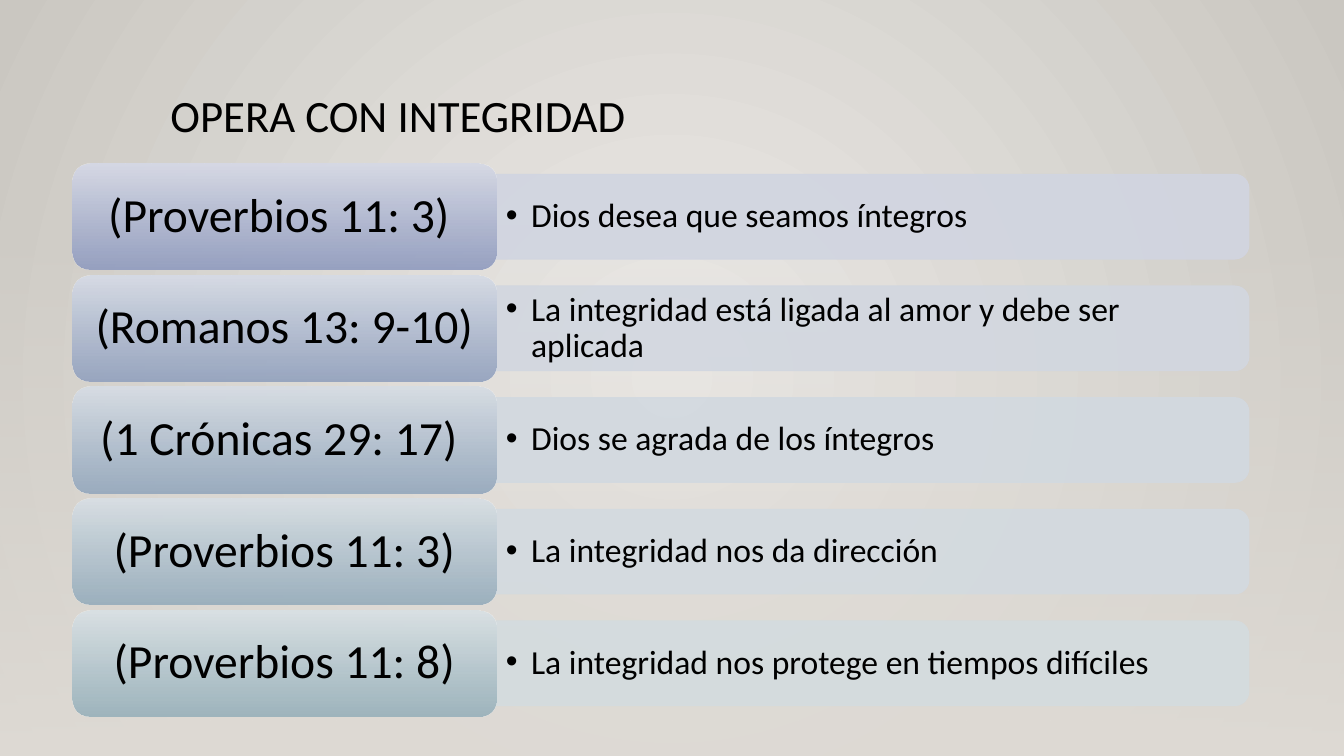
from lxml import etree
from pptx import Presentation
from pptx import util as u
from pptx.dml import color
from pptx.enum import shapes, text
from pptx.oxml import ns

TITLE = "OPERA CON INTEGRIDAD"
ROWS = [
    ("(Proverbios 11: 3) ", "Dios desea que seamos íntegros"),
    ("(Romanos 13: 9-10)", "La integridad está ligada al amor y debe ser aplicada"),
    ("(1 Crónicas 29: 17) ", "Dios se agrada de los íntegros"),
    ("(Proverbios 11: 3)", "La integridad nos da dirección"),
    ("(Proverbios 11: 8)", "La integridad nos protege en tiempos difíciles"),
]
HEX = {
    "ink": "000000", "glow": "ECEAE7", "edge": "CAC7C1", "floor": "DFDBD5",
    "bar": ["D1D5E1", "D2D7E0", "D2D9E0", "D3DAE0", "D4DCDF"],
    "top": ["D6D9E5", "D6DBE5", "D7DDE4", "D8DFE4", "D9E1E4"],
    "base": ["929DC0", "94A3BF", "96A9BE", "98AEBD", "9AB2BC"],
}
WIDE, HIGH = 960, 540
LEFT, TOP, STEP = 51.8, 116.8, 79.75
TAB_W, TAB_H = 302.5, 76
BAR_W, BAR_H, NOTE_H = 537.8, 60.5, 54.7
FRAME = dict(word_wrap=True, auto_size=text.MSO_AUTO_SIZE.NONE)
MID = dict(FRAME, vertical_anchor=text.MSO_ANCHOR.MIDDLE)
PAD = dict(margin_left=u.Pt(10.2), margin_right=u.Pt(10.2),
           margin_top=u.Pt(5.1), margin_bottom=u.Pt(5.1))


def apply(obj, style):
    for key, val in style.items():
        setattr(obj, key, val)


def rgb(code):
    return color.RGBColor.from_string(code)


def fade(node, part):
    etree.SubElement(node, ns.qn("a:alpha"), val=str(part * 1000))


def blend(fill, stops):
    fill.gradient()
    fill.gradient_angle = 270
    for stop, (code, part) in zip(fill.gradient_stops, stops):
        stop.color.rgb = rgb(code)
    for node, (code, part) in zip(fill._fill._gradFill.iter(ns.qn("a:srgbClr")), stops):
        if part < 100:
            fade(node, part)


def shape(kind, x, y, w, h):
    item = slide.shapes.add_shape(kind, *map(u.Pt, (x, y, w, h)))
    item.shadow.inherit = False
    return item


def write(frame, words, size, align, style):
    apply(frame, style)
    para = frame.paragraphs[0]
    apply(para, dict(alignment=align, line_spacing=0.9))
    run = para.add_run()
    run.text = words
    apply(run.font, dict(name="Calibri", size=u.Pt(size)))
    run.font.color.rgb = rgb(HEX["ink"])
    return para


def bullet(para):
    para.level = 1
    props = para._p.get_or_add_pPr()
    props.set("marL", str(u.Pt(18)))
    props.set("indent", str(u.Pt(-18)))
    etree.SubElement(props, ns.qn("a:buFont"), typeface="Arial")
    etree.SubElement(props, ns.qn("a:buChar"), char="•")


def backdrop():
    fill = slide.background.fill
    blend(fill, [(HEX["glow"], 100), (HEX["edge"], 100)])
    line = fill._fill._gradFill.find(ns.qn("a:lin"))
    ring = etree.Element(ns.qn("a:path"), {"path": "circle"})
    etree.SubElement(ring, ns.qn("a:fillToRect"), dict.fromkeys("ltrb", "50000"))
    line.getparent().replace(line, ring)
    floor = shape(shapes.MSO_SHAPE.RECTANGLE, 0, 159, WIDE, HIGH - 159)
    floor.line.fill.background()
    blend(floor.fill, [(HEX["floor"], 0), (HEX["floor"], 100)])


def row(num, label, words):
    y = TOP + num * STEP
    mid = y + TAB_H / 2
    x = LEFT + TAB_W
    bar = shape(shapes.MSO_SHAPE.ROUND_2_SAME_RECTANGLE,
                x + (BAR_W - BAR_H) / 2, mid - BAR_W / 2, BAR_H, BAR_W)
    bar.rotation = 90
    for fill in (bar.fill, bar.line.fill):
        fill.solid()
        fill.fore_color.rgb = rgb(HEX["bar"][num])
    bar.line.width = u.Pt(0.75)
    for node in bar.element.spPr.iter(ns.qn("a:srgbClr")):
        fade(node, 90)
    note = slide.shapes.add_textbox(
        *map(u.Pt, (x, mid - NOTE_H / 2, BAR_W - 3, NOTE_H)))
    bullet(write(note.text_frame, words, 24, text.PP_ALIGN.LEFT, MID))
    tab = shape(shapes.MSO_SHAPE.ROUNDED_RECTANGLE, LEFT, y, TAB_W, TAB_H)
    tab.line.fill.background()
    blend(tab.fill, [(HEX["top"][num], 100), (HEX["base"][num], 92)])
    write(tab.text_frame, label, 34, text.PP_ALIGN.CENTER, dict(MID, **PAD))


deck = Presentation()
apply(deck, dict(slide_width=u.Pt(WIDE), slide_height=u.Pt(HIGH)))
slide = deck.slides.add_slide(deck.slide_layouts[5])
backdrop()
title = slide.shapes.title
slide.shapes.element.append(title.element)
apply(title, dict(left=u.Pt(114.5), top=u.Pt(63.4), width=u.Pt(756), height=u.Pt(82.8)))
write(title.text_frame, TITLE, 32, text.PP_ALIGN.LEFT,
      dict(FRAME, vertical_anchor=text.MSO_ANCHOR.TOP))
for num, (label, words) in enumerate(ROWS):
    row(num, label, words)
deck.save("out.pptx")
